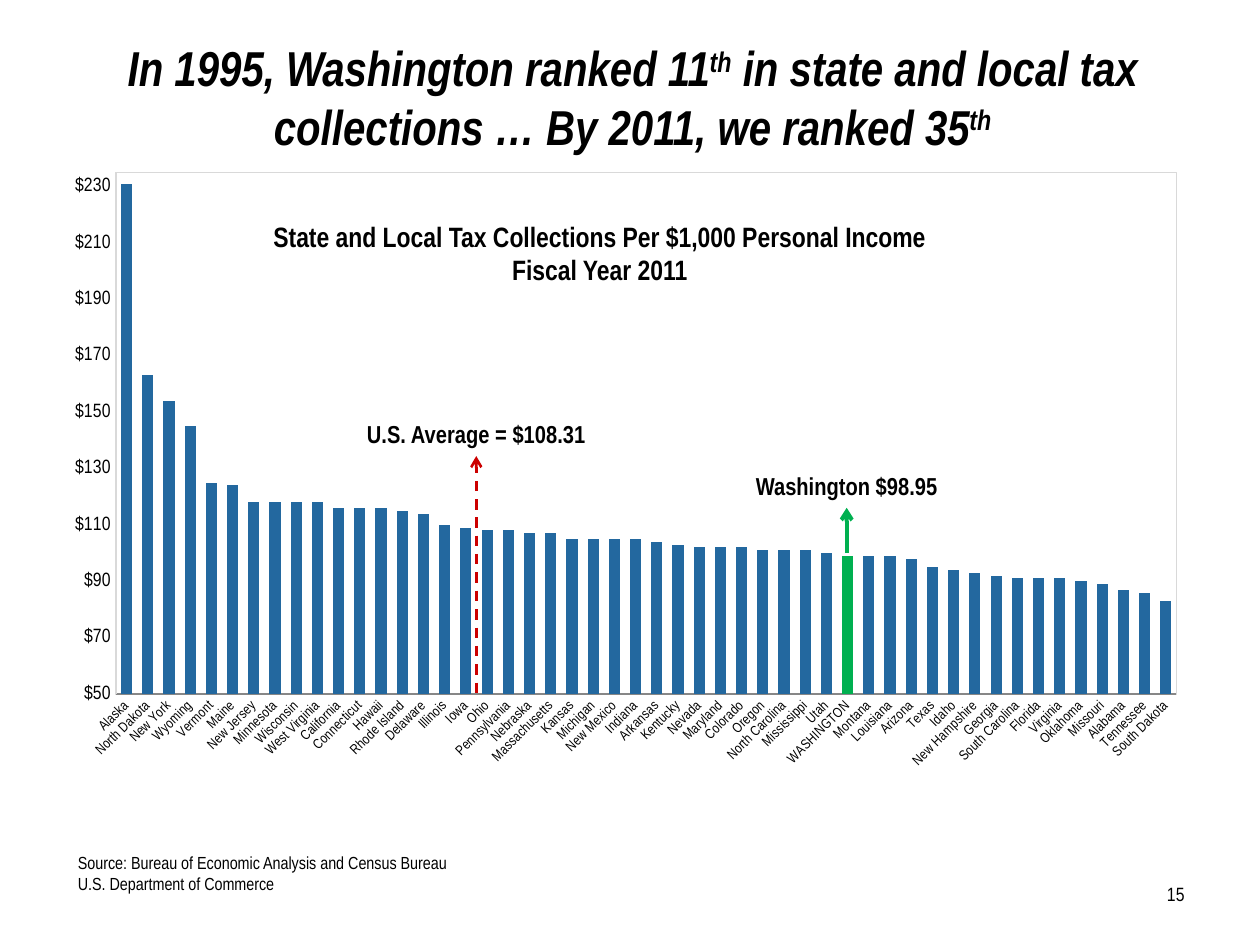
from dataclasses import dataclass
from typing import Any, Optional

import pptx
import pptx.chart.data
import pptx.dml.color
import pptx.enum.chart
import pptx.enum.dml
import pptx.enum.shapes
import pptx.enum.text
import pptx.oxml
import pptx.oxml.ns
import pptx.util
from pptx.util import Inches

HUES = {"ink": "000000", "bar": "23689F", "home": "00B050", "mean": "CC0000", "edge": "D9D9D9"}
FONT = "Arial Narrow"
ALIGN = pptx.enum.text.PP_ALIGN

STATES = {
    "Alaska": 231, "North Dakota": 163, "New York": 154, "Wyoming": 145, "Vermont": 125,
    "Maine": 124, "New Jersey": 118, "Minnesota": 118, "Wisconsin": 118, "West Virginia": 118,
    "California": 116, "Connecticut": 116, "Hawaii": 116, "Rhode Island": 115, "Delaware": 114,
    "Illinois": 110, "Iowa": 109, "Ohio": 108, "Pennsylvania": 108, "Nebraska": 107,
    "Massachusetts": 107, "Kansas": 105, "Michigan": 105, "New Mexico": 105, "Indiana": 105,
    "Arkansas": 104, "Kentucky": 103, "Nevada": 102, "Maryland": 102, "Colorado": 102,
    "Oregon": 101, "North Carolina": 101, "Mississippi": 101, "Utah": 100, "WASHINGTON": 99,
    "Montana": 99, "Louisiana": 99, "Arizona": 98, "Texas": 95, "Idaho": 94,
    "New Hampshire": 93, "Georgia": 92, "South Carolina": 91, "Florida": 91, "Virginia": 91,
    "Oklahoma": 90, "Missouri": 89, "Alabama": 87, "Tennessee": 86, "South Dakota": 83,
}


@dataclass
class Box:
    x: float
    y: float
    w: float
    h: float

    def place(self) -> list[int]:
        return [Inches(n) for n in (self.x, self.y, self.w, self.h)]


@dataclass
class Mark:
    x: float
    low: float
    high: float
    hue: str
    width: float
    dash: bool = False
    label: Optional[Any] = None


def tint(hue: str) -> pptx.dml.color.RGBColor:
    return pptx.dml.color.RGBColor.from_string(HUES[hue])


def style(font: Any, size: float, bold: bool = False, slant: bool = False) -> None:
    font.name, font.size = FONT, pptx.util.Pt(size)
    font.bold, font.italic = bold, slant
    font.color.rgb = tint("ink")


def write(slide: Any, text: str, box: Box, *, size: float, bold: bool = False,
          slant: bool = False, align: Any = ALIGN.LEFT, inset: float = 0.1) -> Any:
    shape = slide.shapes.add_textbox(*box.place())
    frame = shape.text_frame
    frame.word_wrap = True
    frame.margin_left = Inches(inset)
    for row, line in enumerate(text.split("\n")):
        para = frame.paragraphs[0] if row == 0 else frame.add_paragraph()
        para.alignment = align
        for part, piece in enumerate(line.split("\v")):
            if part:
                para.add_line_break()
            for turn, words in enumerate(piece.split("^")):
                if words:
                    run = para.add_run()
                    run.text = words
                    style(run.font, size, bold, slant)
                    if turn % 2:
                        run.font._element.set("baseline", "30000")
    return shape


def draw(slide: Any, mark: Mark) -> None:
    line = slide.shapes.add_connector(
        pptx.enum.shapes.MSO_CONNECTOR.STRAIGHT,
        Inches(mark.x), Inches(mark.low), Inches(mark.x), Inches(mark.high))
    line.line.color.rgb = tint(mark.hue)
    line.line.width = pptx.util.Pt(mark.width)
    if mark.dash:
        line.line.dash_style = pptx.enum.dml.MSO_LINE.DASH
    if mark.label is not None:
        line.end_connect(mark.label, 2)
        stroke = line.line._get_or_add_ln()
        head = pptx.oxml.parse_xml(f'<a:tailEnd {pptx.oxml.ns.nsdecls("a")} type="arrow"/>')
        stroke.append(head)
    line._element.spPr.append(
        pptx.oxml.parse_xml(f'<a:effectLst {pptx.oxml.ns.nsdecls("a")}/>'))


def plot(slide: Any, box: Box) -> None:
    data = pptx.chart.data.CategoryChartData()
    data.categories = list(STATES)
    data.add_series("Series 1", list(STATES.values()))
    chart = slide.shapes.add_chart(
        pptx.enum.chart.XL_CHART_TYPE.COLUMN_CLUSTERED, *box.place(), data).chart
    chart.has_legend = chart.has_title = False
    style(chart.font, 11)

    bars = chart.plots[0]
    bars.gap_width, bars.vary_by_categories = 90, False
    series = bars.series[0]
    home = series.points[list(STATES).index("WASHINGTON")]
    for item, hue in ((series, "bar"), (home, "home")):
        item.format.fill.solid()
        item.format.fill.fore_color.rgb = tint(hue)

    side, base = chart.value_axis, chart.category_axis
    side.minimum_scale, side.maximum_scale, side.major_unit = 50, 235, 20
    side.has_major_gridlines = False
    side.tick_labels.number_format = '"$"#,##0'
    side.tick_labels.number_format_is_linked = False
    side.format.line.color.rgb = tint("edge")
    side.format.line.width = pptx.util.Pt(0.75)
    for axis, size in ((side, 11), (base, 8)):
        axis.major_tick_mark = pptx.enum.chart.XL_TICK_MARK.NONE
        style(axis.tick_labels.font, size)
    base._element.txPr.bodyPr.set("rot", "-2700000")

    area = chart._chartSpace.chart.plotArea
    for old in area.findall(pptx.oxml.ns.qn("c:layout")):
        area.remove(old)
    spots = "".join(f'<c:{key} val="{val}"/>' for key, val in (
        ("layoutTarget", "inner"), ("xMode", "edge"), ("yMode", "edge"),
        ("x", 0.055), ("y", 0.035), ("w", 0.926), ("h", 0.817)))
    area.insert(0, pptx.oxml.parse_xml(
        f'<c:layout {pptx.oxml.ns.nsdecls("c")}><c:manualLayout>{spots}'
        '</c:manualLayout></c:layout>'))
    area.append(pptx.oxml.parse_xml(
        f'<c:spPr {pptx.oxml.ns.nsdecls("c", "a")}><a:noFill/><a:ln w="9525"><a:solidFill>'
        f'<a:srgbClr val="{HUES["edge"]}"/></a:solidFill></a:ln></c:spPr>'))


def main() -> None:
    deck = pptx.Presentation()
    deck.slide_width, deck.slide_height = Inches(10), Inches(7.5)
    slide = deck.slides.add_slide(deck.slide_layouts[6])

    plot(slide, Box(0.42, 1.19, 9.09, 5.07))
    write(slide, "In 1995, Washington ranked 11^th^ in state and local tax "
          "collections … By 2011, we ranked 35^th", Box(0.5, 0.25, 8.98, 1.08),
          size=28, bold=True, slant=True, align=ALIGN.CENTER, inset=0.16)
    write(slide, "State and Local Tax Collections Per $1,000 Personal Income\n"
          "Fiscal Year 2011", Box(1.92, 1.69, 5.68, 0.64),
          size=16, bold=True, align=ALIGN.CENTER)
    home = write(slide, "Washington $98.95", Box(5.79, 3.69, 1.86, 0.34),
                 size=14, bold=True, align=ALIGN.CENTER)
    mean = write(slide, "U.S. Average = $108.31", Box(2.71, 3.28, 2.14, 0.34),
                 size=14, bold=True, align=ALIGN.CENTER)
    for mark in (
        Mark(6.72, 4.39, 4.03, "home", 2.25, label=home),
        Mark(3.78, 4.19, 3.62, "mean", 1.5, dash=True, label=mean),
        Mark(3.78, 4.25, 5.5, "mean", 1.5, dash=True),
    ):
        draw(slide, mark)
    write(slide, "Source: Bureau of Economic Analysis and Census Bureau\v"
          "U.S. Department of Commerce", Box(0.52, 6.71, 5.26, 0.44), size=10)
    write(slide, "15", Box(7.17, 6.95, 2.33, 0.4), size=11, align=ALIGN.RIGHT)
    deck.save("out.pptx")


if __name__ == "__main__":
    main()
